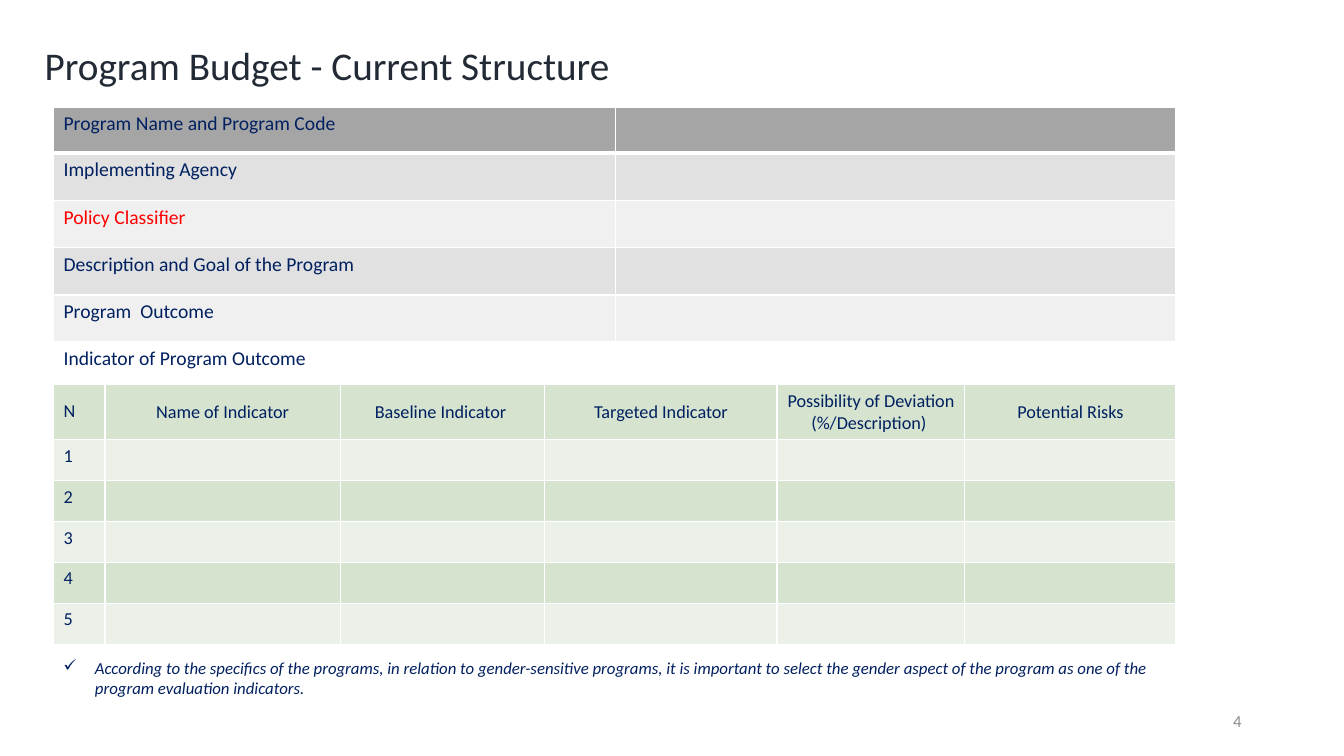
from lxml import etree
from pptx import Presentation
from pptx.dml.color import RGBColor
from pptx.enum.text import MSO_ANCHOR, MSO_AUTO_SIZE, PP_ALIGN
from pptx.oxml.ns import qn
from pptx.util import Pt

LEFT, CENTER, RIGHT = PP_ALIGN.LEFT, PP_ALIGN.CENTER, PP_ALIGN.RIGHT
TOP, MIDDLE = MSO_ANCHOR.TOP, MSO_ANCHOR.MIDDLE
NO_AUTOFIT = MSO_AUTO_SIZE.NONE

PX = 9525
FONT = "Calibri"
TITLE_ONLY = 5
COLORS = {
    "title": "222A35",
    "navy": "002060",
    "red": "FF0000",
    "page": "8C8C8C",
    "white": "FFFFFF",
    "gray_head": "A5A5A5",
    "gray_dark": "E1E1E1",
    "gray_light": "F0F0F0",
    "green_dark": "D5E3CF",
    "green_light": "EBF1E9",
}


class BudgetSlide:
    def __init__(self, deck):
        self.slide = deck.slides.add_slide(deck.slide_layouts[TITLE_ONLY])

    def add_text_run(self, paragraph, text, size, color, align=LEFT, italic=False):
        paragraph.alignment = align
        run = paragraph.add_run()
        run.text = text
        run.font.name = FONT
        run.font.size = Pt(size)
        run.font.italic = italic
        run.font.color.rgb = RGBColor.from_string(COLORS[color])

    def title(self, text, box):
        heading = self.slide.shapes.title
        heading.left, heading.top, heading.width, heading.height = [v * PX for v in box]
        frame = heading.text_frame
        frame.word_wrap = True
        frame.auto_size = NO_AUTOFIT
        frame.vertical_anchor = TOP
        paragraph = frame.paragraphs[0]
        paragraph.line_spacing = 0.9
        paragraph.space_before = Pt(10)
        self.add_text_run(paragraph, text, 28, "title")

    def text(self, text, box, size, color, align=LEFT, anchor=TOP, italic=False):
        frame = self.slide.shapes.add_textbox(*[v * PX for v in box]).text_frame
        frame.word_wrap = True
        frame.vertical_anchor = anchor
        self.add_text_run(frame.paragraphs[0], text, size, color, align, italic)
        return frame.paragraphs[0]

    def bullet(self, paragraph, symbol, indent):
        properties = paragraph._p.get_or_add_pPr()
        properties.set("marL", str(indent * PX))
        properties.set("indent", str(-indent * PX))
        etree.SubElement(properties, qn("a:buChar")).set("char", symbol)

    def table(self, left, top, widths, heights):
        box = [v * PX for v in (left, top, sum(widths), sum(heights))]
        table = self.slide.shapes.add_table(len(heights), len(widths), *box).table
        table.first_row = table.horz_banding = False
        for column, width in zip(table.columns, widths):
            column.width = width * PX
        for row, height in zip(table.rows, heights):
            row.height = height * PX
        return table

    def cell(self, table, row, col, text, size, color, fill, align=LEFT, anchor=TOP, margins=None):
        cell = table.cell(row, col)
        cell.fill.solid()
        cell.fill.fore_color.rgb = RGBColor.from_string(COLORS[fill])
        cell.vertical_anchor = anchor
        if margins:
            cell.margin_left, cell.margin_top, cell.margin_right, cell.margin_bottom = [
                v * PX for v in margins]
        paragraph = cell.text_frame.paragraphs[0]
        if text:
            self.add_text_run(paragraph, text, size, color, align)
        else:
            etree.SubElement(paragraph._p, qn("a:endParaRPr")).set("sz", str(size * 100))
        thick_side = {0: "B", 1: "T"}.get(row)
        properties = cell._tc.get_or_add_tcPr()
        for index, side in enumerate("LRTB"):
            border = etree.Element(qn(f"a:ln{side}"), w=str(Pt(3 if side == thick_side else 1)))
            solid = etree.SubElement(border, qn("a:solidFill"))
            etree.SubElement(solid, qn("a:srgbClr")).set("val", COLORS["white"])
            properties.insert(index, border)


def main():
    deck = Presentation()
    deck.slide_width, deck.slide_height = 1280 * PX, 720 * PX
    page = BudgetSlide(deck)

    page.title("Program Budget - Current Structure", (33, 40, 1218, 56))
    page.text("4", (904, 667, 288, 38), 12, "page", RIGHT, MIDDLE)

    headings = ["N", "Name of Indicator", "Baseline Indicator ", "Targeted Indicator",
                "Possibility of Deviation (%/Description) ", "Potential Risks"]
    indicators = page.table(51, 326, [49, 224, 195, 221, 179, 201], [39, 54] + [39] * 5)
    for col, heading in enumerate(headings):
        caption = "" if col else "Indicator of Program Outcome"
        page.cell(indicators, 0, col, caption, 14, "navy", "white")
        align, margins = (CENTER, (1, 1, 1, 0)) if col else (LEFT, None)
        page.cell(indicators, 1, col, heading, 13, "navy", "green_dark", align, MIDDLE, margins)
        for number in range(1, 6):
            band = "green_light" if number % 2 else "green_dark"
            page.cell(indicators, number + 1, col, "" if col else str(number), 13, "navy", band)
    indicators.cell(0, 0).merge(indicators.cell(0, 4))

    program_fields = [
        ("Program Name and Program Code", "navy", "gray_head"),
        ("Implementing Agency", "navy", "gray_dark"),
        ("Policy Classifier", "red", "gray_light"),
        ("Description and Goal of the Program", "navy", "gray_dark"),
        ("Program  Outcome", "navy", "gray_light"),
    ]
    program = page.table(51, 102, [535, 534], [44, 45, 45, 45, 44])
    for row, (label, color, fill) in enumerate(program_fields):
        page.cell(program, row, 0, label, 14, color, fill)
        page.cell(program, row, 1, "", 14, color, fill)

    gender_note = page.text(
        "According to the specifics of the programs, in relation to gender-sensitive programs, "
        "it is important to select the gender aspect of the program as one of the program "
        "evaluation indicators.", (51, 622, 1069, 48), 12, "navy", italic=True)
    page.bullet(gender_note, "✓", 30)

    deck.save("out.pptx")


if __name__ == "__main__":
    main()
